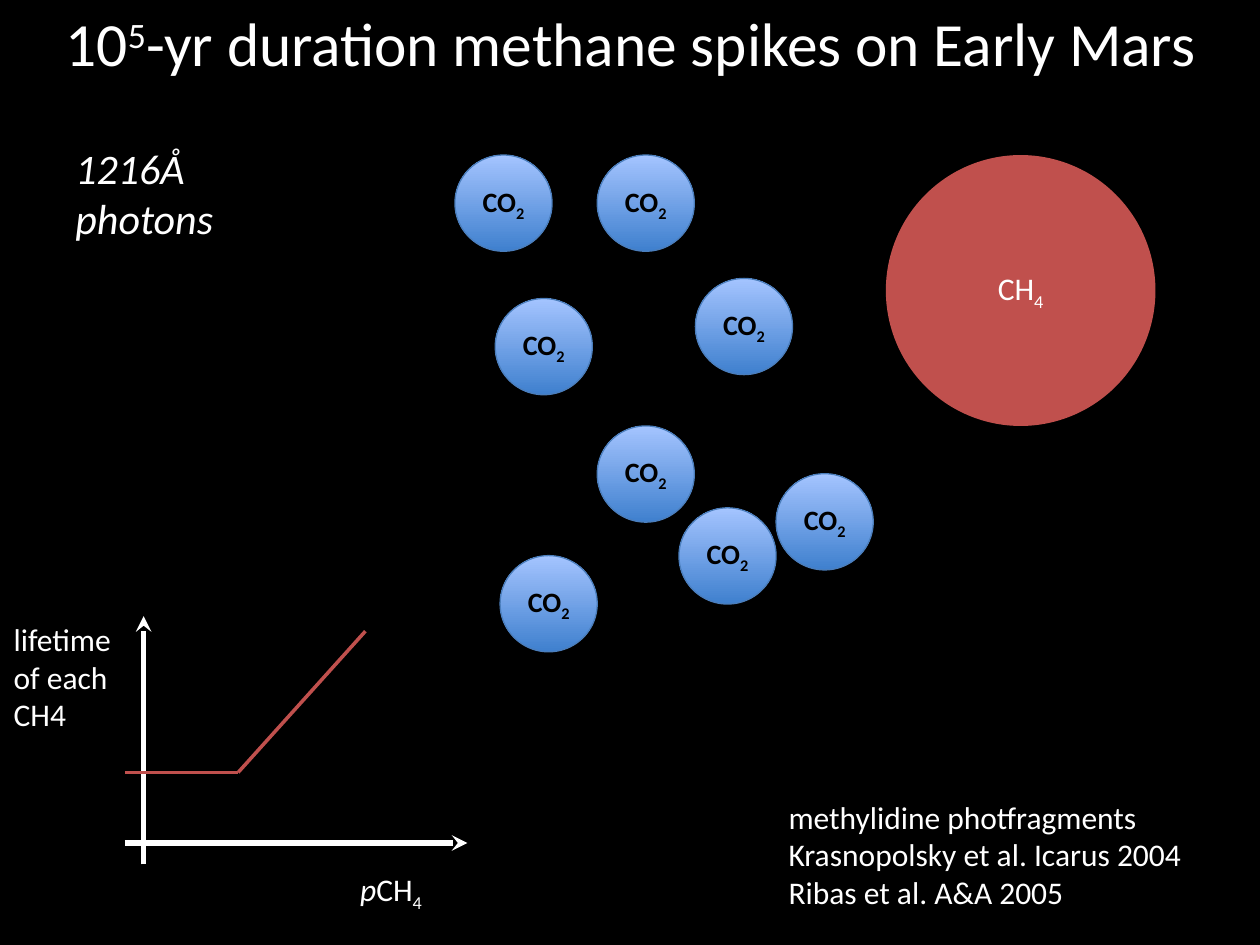
from pptx import Presentation
from pptx.dml.color import RGBColor
from pptx.enum import shapes, text
from pptx.oxml import xmlchemy
from pptx.util import Pt
from lxml import etree
from pptx.oxml.ns import qn

COLORS = {
    "background": "000000",
    "light": "FFFFFF",
    "dark": "000000",
    "methane": "C0504D",
    "dioxide_bottom": "3F80CE",
    "dioxide_top": "A4C4FF",
    "dioxide_edge": "4B7EBC",
}
FONT = "Calibri"
DIOXIDE_SIZE = (55.5, 55)
DIOXIDE_POSITIONS = [
    (341.3, 88.6), (341.3, 243.4), (283, 170.6), (285.8, 317.5),
    (443.5, 270.7), (397.4, 159.1), (260, 88.6), (388, 290.2),
]


def color(name):
    return RGBColor.from_string(COLORS[name])


def add_run(paragraph, content, size, shade="light", bold=False, italic=False, baseline=0):
    run = paragraph.add_run()
    run.text = content
    font = run.font
    font.name, font.size = FONT, Pt(size)
    font.bold, font.italic = bold, italic
    font.color.rgb = color(shade)
    if baseline:
        font._element.set("baseline", str(baseline * 1000))


def add_title(slide):
    title = slide.shapes.title
    title.left, title.top, title.width, title.height = Pt(0.7), Pt(0), Pt(719.3), Pt(48.2)
    frame = title.text_frame
    frame.auto_size = text.MSO_AUTO_SIZE.NONE
    frame.vertical_anchor = text.MSO_ANCHOR.MIDDLE
    paragraph = frame.paragraphs[0]
    paragraph.alignment = text.PP_ALIGN.CENTER
    add_run(paragraph, "10", 35.1)
    add_run(paragraph, "5", 35.1, baseline=30)
    add_run(paragraph, "-yr duration methane spikes on Early Mars", 35.1)


def add_label(slide, left, top, width, height, lines, size=18):
    box = slide.shapes.add_textbox(Pt(left), Pt(top), Pt(width), Pt(height))
    frame = box.text_frame
    frame.word_wrap = False
    frame.auto_size = text.MSO_AUTO_SIZE.SHAPE_TO_FIT_TEXT
    for index, runs in enumerate(lines):
        paragraph = frame.add_paragraph() if index else frame.paragraphs[0]
        for content, style in runs:
            add_run(paragraph, content, size, **style)


def add_molecule(slide, left, top, width, height, formula, count, size, **style):
    circle = slide.shapes.add_shape(
        shapes.MSO_SHAPE.OVAL, Pt(left), Pt(top), Pt(width), Pt(height))
    circle.shadow.inherit = False
    frame = circle.text_frame
    frame.word_wrap = False
    frame.vertical_anchor = text.MSO_ANCHOR.MIDDLE
    paragraph = frame.paragraphs[0]
    paragraph.alignment = text.PP_ALIGN.CENTER
    add_run(paragraph, formula, size, **style)
    add_run(paragraph, count, size, baseline=-25, **style)
    return circle


def add_methane(slide):
    circle = add_molecule(slide, 506.2, 88.6, 154.1, 154.8, "CH", "4", 18)
    circle.fill.solid()
    circle.fill.fore_color.rgb = color("methane")
    circle.line.fill.background()


def add_dioxide(slide, left, top):
    circle = add_molecule(slide, left, top, *DIOXIDE_SIZE, "CO", "2", 16, shade="dark", bold=True)
    circle.fill.gradient()
    circle.fill.gradient_angle = 90
    for stop, name, position in zip(
            circle.fill.gradient_stops, ("dioxide_bottom", "dioxide_top"), (0, 1)):
        stop.color.rgb = color(name)
        stop.position = position
    circle.line.color.rgb = color("dioxide_edge")
    circle.line.width = Pt(0.75)


def add_line(slide, start, end, shade, width, arrow=False):
    line = slide.shapes.add_connector(
        shapes.MSO_CONNECTOR.STRAIGHT, *(Pt(value) for value in start + end))
    line.line.color.rgb = color(shade)
    line.line.width = Pt(width)
    if arrow:
        etree.SubElement(line.line._get_or_add_ln(), qn("a:tailEnd"), type="stealth")
    etree.SubElement(line._element.spPr, qn("a:effectLst"))


def main():
    presentation = Presentation()
    presentation.slide_width, presentation.slide_height = Pt(720), Pt(540)
    slide = presentation.slides.add_slide(presentation.slide_layouts[5])
    slide.background.fill.solid()
    slide.background.fill.fore_color.rgb = color("background")

    add_title(slide)
    add_methane(slide)
    for left, top in DIOXIDE_POSITIONS:
        add_dioxide(slide, left, top)

    italic = {"italic": True}
    add_label(slide, 443.5, 452.2, 242, 72.7, [
        [("methylidine photfragments", {})],
        [("Krasnopolsky et al. Icarus 2004", {})],
        [("Ribas et al. A&A 2005", {})],
    ])
    add_label(slide, 36, 77.8, 100, 65.5, [[("1216Å", italic)], [("photons", italic)]], 24)
    add_label(slide, 0.7, 350.6, 71.3, 72.7, [
        [("lifetime", {})], [("of each", {})], [("CH4", {})],
    ])
    add_label(slide, 198.7, 493.9, 52.6, 28.8, [
        [("p", italic), ("CH", {}), ("4", {"baseline": -25})],
    ])

    add_line(slide, (71.3, 481.7), (267.1, 481.7), "light", 3, arrow=True)
    add_line(slide, (82.1, 493.9), (82.1, 352.1), "light", 3, arrow=True)
    add_line(slide, (71.3, 441.4), (136.1, 441.4), "methane", 2)
    add_line(slide, (136.1, 441.4), (208.8, 360.7), "methane", 2)
    presentation.save("out.pptx")


if __name__ == "__main__":
    main()
